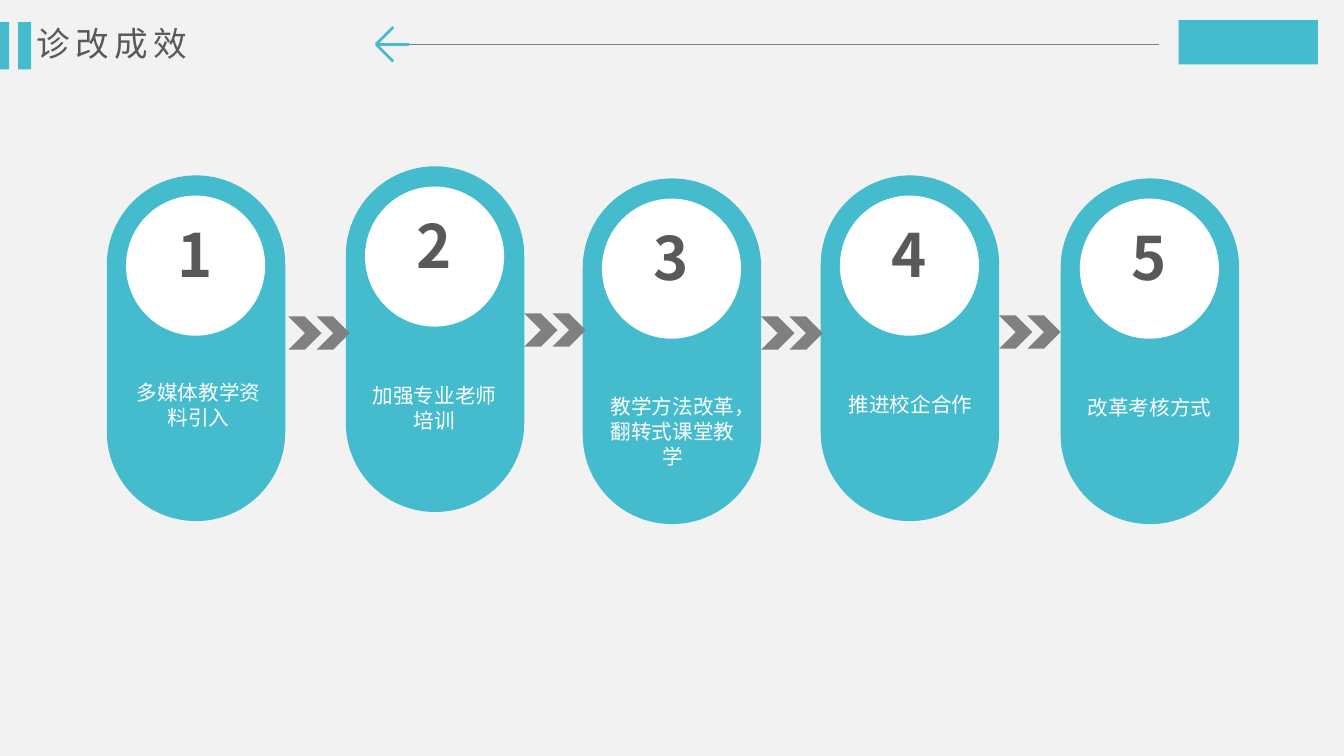
from lxml.etree import SubElement
from pptx import Presentation
from pptx.dml.color import RGBColor
from pptx.enum.shapes import MSO_CONNECTOR as Line, MSO_SHAPE as Shape
from pptx.enum.text import MSO_ANCHOR as Anchor, PP_ALIGN as Align
from pptx.oxml.ns import qn
from pptx.util import Inches, Pt

TITLE = "诊改成效"
STEPS = [
    ("多媒体教学资料引入", 1.06, 1.74, 1.18, 3.72, 0.59),
    ("加强专业老师培训", 3.43, 1.65, 3.52, 3.75, 0.59),
    ("教学方法改革，翻转式课堂教学", 5.78, 1.77, 5.88, 3.86, 0.84),
    ("推进校企合作", 8.14, 1.74, 8.24, 3.84, 0.35),
    ("改革考核方式", 10.52, 1.77, 10.61, 3.87, 0.35),
]
CHEVRONS = [(2.86, 3.14), (5.2, 3.11), (7.55, 3.14), (9.91, 3.13)]
BARS = [(0, 0.09), (0.18, 0.13)]
ARROW_TIP = (3.73, 0.44)
ARROW_ENDS = [(3.9, 0.27), (3.9, 0.61), (4.06, 0.44)]
COLORS = {"back": "F2F2F2", "teal": "45BBCE", "gray": "808080",
          "dark": "595959", "white": "FFFFFF"}
FONT = "Noto Sans CJK SC"


def color(name):
    """Return the named colour."""
    return RGBColor.from_string(COLORS[name])


def add_block(parent, kind, left, top, width, height, fill):
    """Add a filled shape without outline."""
    block = parent.shapes.add_shape(
        kind, Inches(left), Inches(top), Inches(width), Inches(height))
    block.shadow.inherit = False
    block.fill.solid()
    block.fill.fore_color.rgb = color(fill)
    block.line.fill.background()
    return block


def add_line(parent, start, end, stroke, weight):
    """Add a straight line."""
    line = parent.shapes.add_connector(
        Line.STRAIGHT, *(Inches(value) for value in start + end))
    line.line.color.rgb = color(stroke)
    line.line.width = Pt(weight)
    SubElement(line._element.spPr, qn("a:effectLst"))


def add_text(parent, text, left, top, width, height, size, ink,
             align=Align.CENTER, bold=False, tracking=0, spacing=None,
             anchor=Anchor.TOP, inset=True):
    """Add a wrapped one-run text box."""
    box = parent.shapes.add_textbox(
        Inches(left), Inches(top), Inches(width), Inches(height))
    frame = box.text_frame
    frame.word_wrap = True
    frame.vertical_anchor = anchor
    if not inset:
        frame.margin_left = frame.margin_right = 0
        frame.margin_top = frame.margin_bottom = 0
    para = frame.paragraphs[0]
    para.alignment = align
    if spacing:
        para.line_spacing = spacing
    span = para.add_run()
    span.text = text
    span.font.size = Pt(size)
    span.font.bold = bold
    span.font.name = FONT
    span.font.color.rgb = color(ink)
    props = span.font._element
    SubElement(props, qn("a:ea")).set("typeface", FONT)
    if tracking:
        props.set("spc", str(int(tracking * 100)))


def add_header(page):
    """Add the title with its bars, rule, arrow and badge."""
    for left, width in BARS:
        add_block(page, Shape.RECTANGLE, left, 0.22, width, 0.47, "teal")
    add_block(page, Shape.RECTANGLE, 11.69, 0.2, 1.38, 0.44, "teal")
    add_line(page, (4.06, 0.44), (11.5, 0.44), "gray", 0.5)
    add_text(page, TITLE, 0.26, 0.18, 3.56, 0.5, 24, "dark",
             align=Align.LEFT, tracking=4)
    arrow = page.shapes.add_group_shape()
    for end in ARROW_ENDS:
        add_line(arrow, ARROW_TIP, end, "teal", 2)


def add_step(page, number, caption, left, top, text_left, text_top, text_height):
    """Add one numbered pill with its caption."""
    step = page.shapes.add_group_shape()
    pill = add_block(step, Shape.ROUNDED_RECTANGLE, left, top, 1.77, 3.43, "teal")
    pill.adjustments[0] = 0.5
    add_block(step, Shape.OVAL, left + 0.19, top + 0.2, 1.38, 1.39, "white")
    add_text(step, str(number), left + 0.12, top + 0.12, 1.52, 0.95, 42.7, "dark",
             bold=True, tracking=0.7, spacing=1.5, anchor=Anchor.MIDDLE, inset=False)
    add_text(step, caption, text_left, text_top, 1.58, text_height, 14.7, "white")


def main():
    """Build and save the slide."""
    deck = Presentation()
    deck.slide_width, deck.slide_height = Inches(13.33), Inches(7.5)
    page = deck.slides.add_slide(deck.slide_layouts[6])
    page.background.fill.solid()
    page.background.fill.fore_color.rgb = color("back")
    add_header(page)
    for number, step in enumerate(STEPS, 1):
        add_step(page, number, *step)
    for left, top in CHEVRONS:
        pair = page.shapes.add_group_shape()
        for offset in (0, 0.28):
            add_block(pair, Shape.CHEVRON, left + offset, top, 0.33, 0.33, "gray")
    deck.save("out.pptx")


if __name__ == "__main__":
    main()
